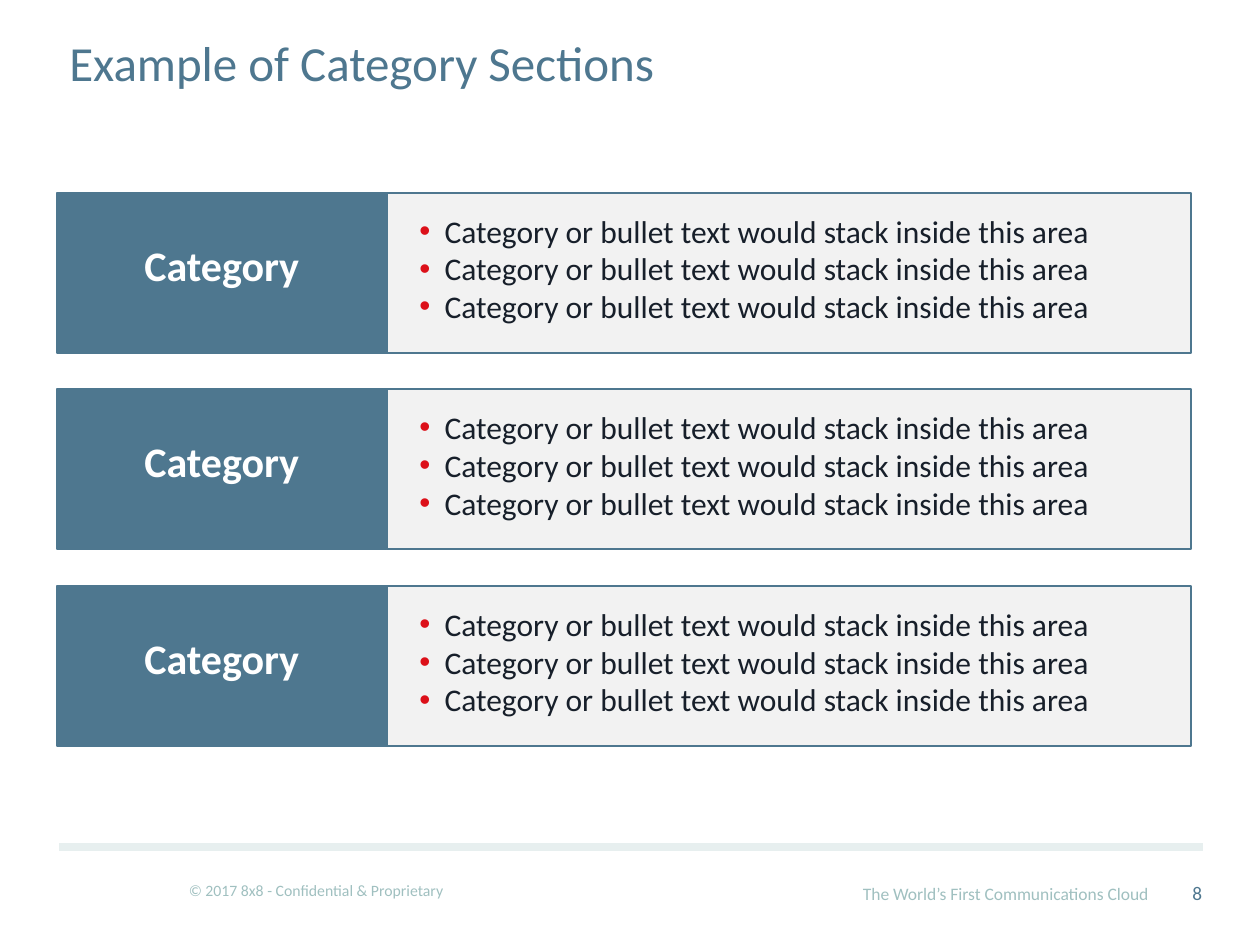
from lxml import etree
from pptx import Presentation
from pptx.dml.color import RGBColor
from pptx.enum.shapes import MSO_CONNECTOR, MSO_SHAPE
from pptx.enum.text import MSO_ANCHOR, PP_ALIGN
from pptx.oxml.ns import qn
from pptx.util import Inches, Pt

LEFT, CENTER, RIGHT = PP_ALIGN.LEFT, PP_ALIGN.CENTER, PP_ALIGN.RIGHT
TOP, MIDDLE, BOTTOM = MSO_ANCHOR.TOP, MSO_ANCHOR.MIDDLE, MSO_ANCHOR.BOTTOM
RECTANGLE = MSO_SHAPE.RECTANGLE
STRAIGHT = MSO_CONNECTOR.STRAIGHT

FONT = "Calibri"
COLORS = {
    "steel": "4E778F",
    "panel": "F2F2F2",
    "ink": "171F2A",
    "bullet": "DC1019",
    "white": "FFFFFF",
    "rule": "E7EFEF",
    "footer": "A0C0C0",
}
BULLET_TEXT = "Category or bullet text would stack inside this area"
CATEGORIES = [("Category", [BULLET_TEXT] * 3)] * 3


def rgb(name):
    return RGBColor.from_string(COLORS[name])


def box(left, top, width, height):
    return [Inches(value) for value in (left, top, width, height)]


def style(paragraph, size, color, bold=False, align=LEFT):
    paragraph.alignment = align
    font = paragraph.font
    font.name, font.size, font.bold = FONT, Pt(size), bold
    font.color.rgb = rgb(color)


def add_bullet(paragraph, indent=0.2):
    props = paragraph._p.get_or_add_pPr()
    props.set("marL", str(Inches(indent)))
    props.set("indent", str(-Inches(indent)))
    color = etree.SubElement(props, qn("a:buClr"))
    etree.SubElement(color, qn("a:srgbClr"), val=COLORS["bullet"])
    etree.SubElement(props, qn("a:buFont"), typeface="Arial")
    etree.SubElement(props, qn("a:buChar"), char="•")


def add_label(slide, area, text, size, color, bold=False, align=LEFT,
              anchor=TOP, wrap=True):
    frame = slide.shapes.add_textbox(*box(*area)).text_frame
    frame.word_wrap, frame.vertical_anchor = wrap, anchor
    frame.text = text
    style(frame.paragraphs[0], size, color, bold, align)
    return frame


def add_panel(slide, area, fill):
    panel = slide.shapes.add_shape(RECTANGLE, *box(*area))
    panel.shadow.inherit = False
    panel.fill.solid()
    panel.fill.fore_color.rgb = rgb(fill)
    panel.line.color.rgb = rgb("steel")
    panel.line.width = Pt(1)


def add_title(slide, area, text):
    title = slide.shapes.title
    title.left, title.top, title.width, title.height = box(*area)
    title.text_frame.text = text
    title.text_frame.vertical_anchor = MIDDLE
    style(title.text_frame.paragraphs[0], 28, "steel")


def add_category(slide, area, heading, bullets):
    left, top, width, height = area
    heading_width = 2.62
    body_left = left + heading_width
    add_panel(slide, (left, top, heading_width, height), "steel")
    add_panel(slide, (body_left, top, width - heading_width, height), "panel")
    add_label(slide, (left, top + 0.32, heading_width, 0.5), heading, 24,
              "white", bold=True, align=CENTER)

    # Bullet list
    area = (body_left + 0.16, top + 0.1, 6, 1.01)
    frame = slide.shapes.add_textbox(*box(*area)).text_frame
    frame.word_wrap = True
    frame.text = "\n".join(bullets)
    for paragraph in frame.paragraphs:
        add_bullet(paragraph)
        style(paragraph, 18, "ink")


def add_footer(slide, area):
    left, top, width, _ = area
    rule = slide.shapes.add_connector(
        STRAIGHT, *box(left, top, left + width, top))
    rule.line.color.rgb = rgb("rule")
    rule.line.width = Pt(4.5)
    etree.SubElement(rule._element.spPr, qn("a:effectLst"))

    add_label(slide, (left + 0.93, top + 0.22, 2.25, 0.25),
              "© 2017 8x8 - Confidential & Proprietary", 9, "footer",
              wrap=False)
    add_label(slide, (left + 6.28, top + 0.24, 2.52, 0.27),
              "The World’s First Communications Cloud", 10, "footer",
              wrap=False)
    number = add_label(slide, (left + 8.79, top + 0.2, 0.35, 0.3), "8", 11,
                       "steel", align=RIGHT, anchor=BOTTOM)
    number.margin_left = number.margin_right = Inches(0.07)
    number.margin_top = number.margin_bottom = Inches(0.04)


def main():
    prs = Presentation()
    prs.slide_width, prs.slide_height = Inches(10), Inches(7.5)
    slide = prs.slides.add_slide(prs.slide_layouts[5])

    add_footer(slide, (0.47, 6.72, 9.08, 0.78))
    add_title(slide, (0.45, 0, 9, 0.99), "Example of Category Sections")

    # Category rows at an equal pitch
    first_top, pitch = 1.53, 1.56
    for row, (heading, bullets) in enumerate(CATEGORIES):
        add_category(slide, (0.45, first_top + row * pitch, 9, 1.27),
                     heading, bullets)

    prs.save("out.pptx")


if __name__ == "__main__":
    main()
